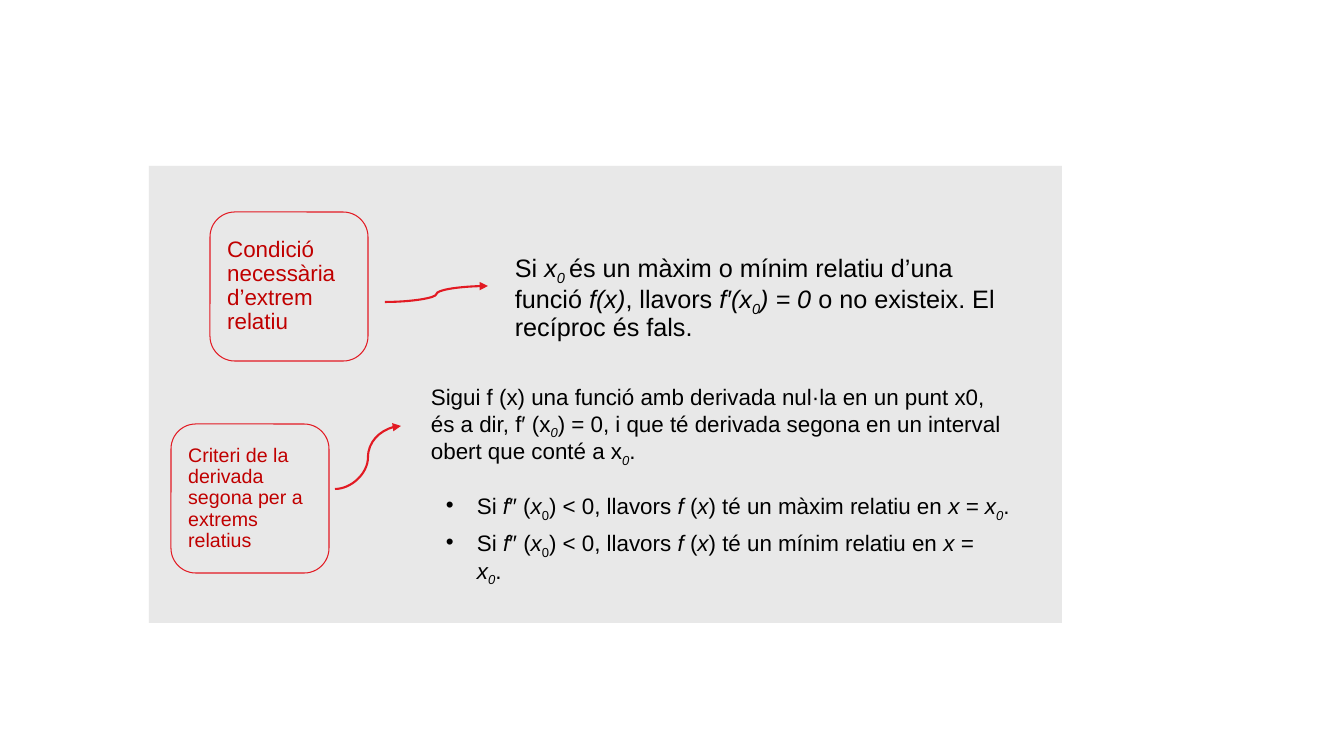
"""Build the slide on relative extrema: necessary condition and second derivative test."""
from lxml import etree
from pptx import Presentation, util as u
from pptx.dml.color import RGBColor
from pptx.enum import shapes, text
from pptx.oxml.ns import qn

PX = 914400 / 100.8
COLOURS = {"panel": "E5E5E5", "line": "E21A23", "label": "C00000", "body": "000000"}


def px(*lengths):
    return [u.Emu(round(length * PX)) for length in lengths]


def write(box, pieces, size, colour):
    """Fill a box with (text, style) pieces; style i is italic, s is subscript."""
    frame = box.text_frame
    frame.word_wrap = True
    paragraph = frame.paragraphs[0]
    paragraph.alignment = text.PP_ALIGN.LEFT
    paragraph.line_spacing = 0.9
    paragraph.space_after = u.Pt(6)
    for wording, style in pieces:
        run = paragraph.add_run()
        run.text = wording
        run.font.name = "Arial"
        run.font.size = u.Pt(size)
        run.font.color.rgb = RGBColor.from_string(COLOURS[colour])
        run.font.italic = "i" in style
        if "s" in style:
            run.font._element.set("baseline", "-25000")
    return paragraph


prs = Presentation()
prs.slide_width, prs.slide_height = px(1344, 756)
slide = prs.slides.add_slide(prs.slide_layouts[6])

panel = slide.shapes.add_shape(shapes.MSO_SHAPE.RECTANGLE, *px(149, 166, 913, 457))
panel.shadow.inherit = False
panel.fill.solid()
panel.fill.fore_color.rgb = RGBColor.from_string(COLOURS["panel"])
panel.line.fill.background()
panel_colour = panel._element.spPr.find(qn("a:solidFill"))[0]
etree.SubElement(panel_colour, qn("a:alpha")).set("val", "85000")

for left, top, size, title in (
    (210, 212, 16, "Condició necessària d’extrem relatiu"),
    (171, 424, 14, "Criteri de la derivada segona per a extrems relatius"),
):
    label = slide.shapes.add_shape(
        shapes.MSO_SHAPE.ROUNDED_RECTANGLE, *px(left, top, 158, 149))
    label.shadow.inherit = False
    label.fill.background()
    label.line.color.rgb = RGBColor.from_string(COLOURS["line"])
    label.line.width = u.Pt(0.75)
    label.text_frame.vertical_anchor = text.MSO_ANCHOR.MIDDLE
    write(label, [(title, "")], size, "label")

for ends in ((385, 302, 488, 286), (335, 489, 401, 426)):
    arrow = slide.shapes.add_connector(shapes.MSO_CONNECTOR.CURVE, *px(*ends))
    arrow.line.color.rgb = RGBColor.from_string(COLOURS["line"])
    arrow.line.width = u.Pt(1.5)
    etree.SubElement(arrow.line._get_or_add_ln(), qn("a:tailEnd")).set("type", "triangle")
    etree.SubElement(arrow._element.spPr, qn("a:effectLst"))

condition = slide.shapes.add_textbox(*px(505, 248, 517, 77))
write(condition, [
    ("Si ", ""), ("x", "i"), ("0 ", "is"),
    ("és un màxim o mínim relatiu d’una funció ", ""), ("f(x)", "i"),
    (", llavors ", ""), ("f′(x", "i"), ("0", "is"), (") = 0", "i"),
    (" o no existeix. El recíproc és fals.", ""),
], 18, "body")

criterion = slide.shapes.add_textbox(*px(421, 381, 600, 90))
write(criterion, [
    ("Sigui f (x) una funció amb derivada nul·la en un punt x0, és a dir, f′ (x", ""),
    ("0", "is"),
    (") = 0, i que té derivada segona en un interval obert que conté a x", ""),
    ("0", "is"), (".", ""),
], 16, "body")

for top, width, extremum in ((488, 586, "màxim"), (525, 572, "mínim")):
    case = slide.shapes.add_textbox(*px(436, top, width, 32))
    bulleted = write(case, [
        ("Si ", ""), ("f", "i"), ("″ (", ""), ("x", "i"), ("0", "s"),
        (") < 0, llavors ", ""), ("f ", "i"), ("(", ""), ("x", "i"),
        (f") té un {extremum} relatiu en ", ""), ("x = x", "i"), ("0", "is"), (".", ""),
    ], 16, "body")
    properties = bulleted._p.get_or_add_pPr()
    indent = px(31)[0]
    properties.set("marL", str(indent))
    properties.set("indent", str(-indent))
    etree.SubElement(properties, qn("a:buFont")).set("typeface", "Arial")
    etree.SubElement(properties, qn("a:buChar")).set("char", "•")

prs.save("out.pptx")
